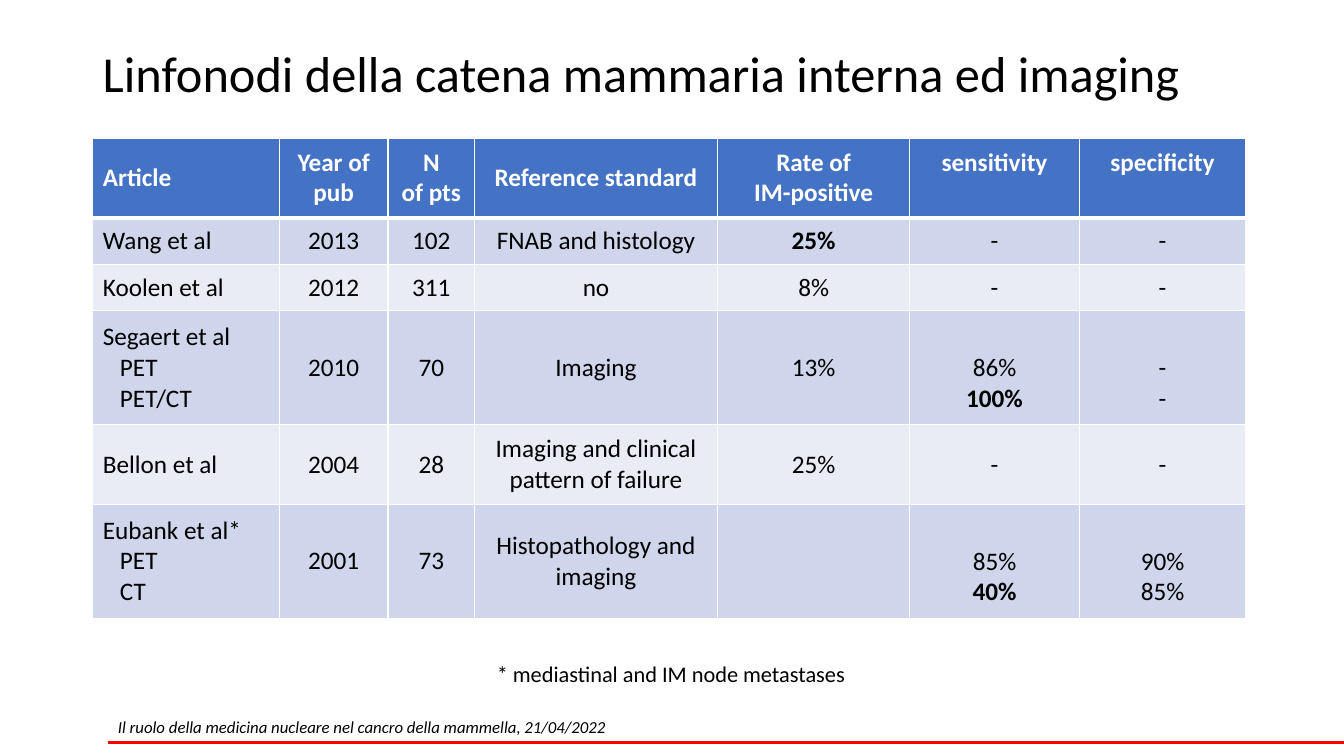
from pptx import Presentation
from pptx.dml.color import RGBColor
from pptx.enum.shapes import MSO_CONNECTOR
from pptx.enum.text import MSO_ANCHOR as Anchor, PP_ALIGN as Align
from pptx.oxml.ns import qn
from pptx.util import Cm, Pt
from lxml.etree import SubElement

FONT = "Calibri"
BLACK, WHITE, RED = "000000", "FFFFFF", "FF0000"
HEADER_BLUE, BAND_DARK, BAND_LIGHT = "4472C4", "CFD5EA", "E9EBF5"

COLUMN_WIDTHS = [4.7, 2.74, 2.18, 6.12, 4.85, 4.27, 4.2]
ROW_HEIGHTS = [2.01, 1.17, 1.17, 2.87, 2.01, 2.87]
STUDIES = [
    ["Article", "Year of pub", "N\nof pts", "Reference standard",
     "Rate of\nIM-positive", "sensitivity", "specificity"],
    ["Wang et al", "2013", "102", "FNAB and histology", "25%", "-", "-"],
    ["Koolen et al", "2012", "311", "no", "8%", "-", "-"],
    ["Segaert et al\nPET\nPET/CT", "2010", "70", "Imaging", "13%",
     "86%\n100%", "-\n-"],
    ["Bellon et al", "2004", "28", "Imaging and clinical pattern of failure",
     "25%", "-", "-"],
    ["Eubank et al*\nPET\nCT", "2001", "73", "Histopathology and imaging", "",
     "85%\n40%", "90%\n85%"],
]
BOLD_RESULTS = {(1, 4, 0), (3, 5, 1), (5, 5, 1)}
RESULT_COLUMNS = (5, 6)
CELL_MARGIN = 0.13
TEXT_LINE = 0.78
MODALITY_INDENT = 0.43


def color(value):
    return RGBColor.from_string(value)


def style_runs(paragraph, size, tint=BLACK, bold=False, italic=False):
    for run in paragraph.runs:
        font = run.font
        font.name, font.size = FONT, Pt(size)
        font.bold, font.italic = bold, italic
        font.color.rgb = color(tint)


def add_text(slide, box, text, size, italic=False, wrap=True, anchor=Anchor.TOP):
    frame = slide.shapes.add_textbox(*map(Cm, box)).text_frame
    frame.word_wrap = wrap
    frame.vertical_anchor = anchor
    frame.text = text
    style_runs(frame.paragraphs[0], size, italic=italic)
    return frame


def add_title(slide, box):
    title = add_text(slide, box, "Linfonodi della catena mammaria interna ed imaging",
                     36, anchor=Anchor.MIDDLE)
    title.paragraphs[0].line_spacing = 0.9


def set_borders(cell, row):
    widths = {"L": 1, "R": 1, "T": 3 if row == 1 else 1, "B": 3 if row == 0 else 1}
    properties = cell._tc.get_or_add_tcPr()
    for side, width in widths.items():
        border = SubElement(properties, qn(f"a:ln{side}"), w=str(Pt(width)))
        fill = SubElement(border, qn("a:solidFill"))
        SubElement(fill, qn("a:srgbClr"), val=WHITE)


def fill_cell(cell, row, column, text):
    is_header = row == 0
    set_borders(cell, row)
    cell.fill.solid()
    band = BAND_DARK if row % 2 else BAND_LIGHT
    cell.fill.fore_color.rgb = color(HEADER_BLUE if is_header else band)
    cell.vertical_anchor = Anchor.MIDDLE
    if column in RESULT_COLUMNS:
        if is_header:
            cell.margin_bottom = Cm(CELL_MARGIN + TEXT_LINE)
        elif "\n" in text:
            cell.margin_top = Cm(CELL_MARGIN + TEXT_LINE)
    cell.text_frame.text = text
    for line, paragraph in enumerate(cell.text_frame.paragraphs):
        paragraph.alignment = Align.CENTER if column else Align.LEFT
        if column == 0 and line > 0:
            paragraph._p.get_or_add_pPr().set("marL", str(Cm(MODALITY_INDENT)))
        style_runs(paragraph, 18, WHITE if is_header else BLACK,
                   bold=is_header or (row, column, line) in BOLD_RESULTS)


def add_studies_table(slide, left, top):
    table = slide.shapes.add_table(
        len(ROW_HEIGHTS), len(COLUMN_WIDTHS), Cm(left), Cm(top),
        Cm(sum(COLUMN_WIDTHS)), Cm(sum(ROW_HEIGHTS))).table
    for column, width in zip(table.columns, COLUMN_WIDTHS):
        column.width = Cm(width)
    for row, height in zip(table.rows, ROW_HEIGHTS):
        row.height = Cm(height)
    for row, study in enumerate(STUDIES):
        for column, text in enumerate(study):
            fill_cell(table.cell(row, column), row, column, text)


def add_footer(slide, left, top, right):
    add_text(slide, (left, top, 13.16, 0.77),
             "Il ruolo della medicina nucleare nel cancro della mammella, 21/04/2022",
             12, italic=True)
    rule_y = Cm(top + 0.79)
    rule = slide.shapes.add_connector(
        MSO_CONNECTOR.STRAIGHT, Cm(left), rule_y, Cm(right), rule_y)
    rule.line.color.rgb = color(RED)
    rule.line.width = Pt(2.25)
    SubElement(rule._element.spPr, qn("a:effectLst"))


def main():
    deck = Presentation()
    deck.slide_width, deck.slide_height = Cm(33.87), Cm(19.05)
    slide = deck.slides.add_slide(deck.slide_layouts[6])
    add_title(slide, (2.34, 0.74, 31.09, 2.34))
    add_studies_table(slide, 2.34, 3.48)
    add_text(slide, (12.27, 16.51, 9.73, 0.94),
             "* mediastinal and IM node metastases", 16, wrap=False)
    add_footer(slide, 2.72, 17.93, 33.87)
    deck.save("out.pptx")


if __name__ == "__main__":
    main()
